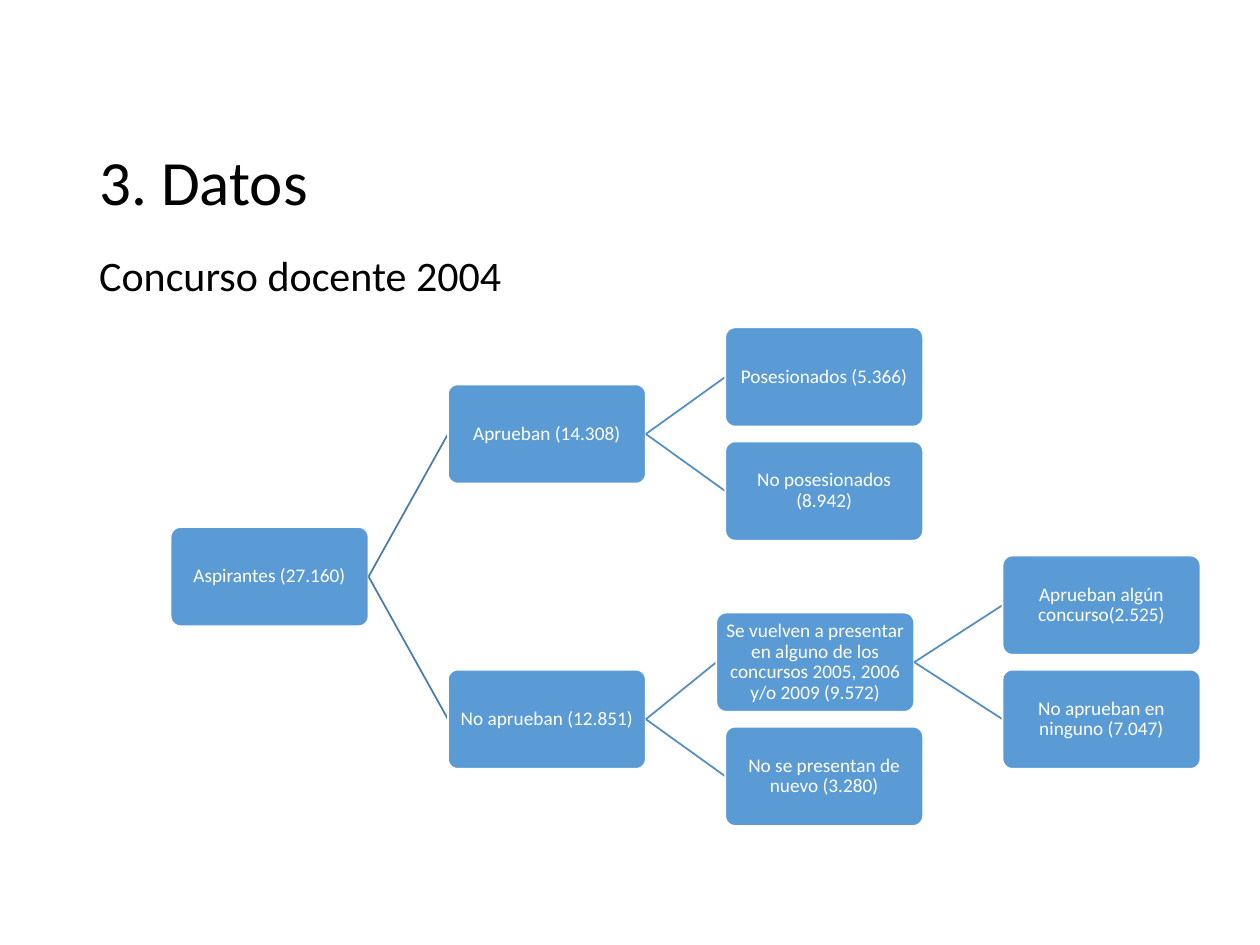
from dataclasses import dataclass

import pptx
import pptx.dml.color
import pptx.enum.shapes
import pptx.enum.text
import pptx.oxml.ns
import pptx.util
from lxml import etree

Cm = pptx.util.Cm
Pt = pptx.util.Pt
RGBColor = pptx.dml.color.RGBColor
Anchor = pptx.enum.text.MSO_ANCHOR
Align = pptx.enum.text.PP_ALIGN

BLACK = RGBColor(0x00, 0x00, 0x00)
WHITE = RGBColor(0xFF, 0xFF, 0xFF)
NODE_BLUE = RGBColor(0x5B, 0x9B, 0xD5)
LINK_COLOURS = (RGBColor(0x49, 0x7C, 0xAB), RGBColor(0x53, 0x8D, 0xC1), RGBColor(0x53, 0x8D, 0xC1))

FONT = "Calibri"
NODE_WIDTH = Cm(3.99)
NODE_HEIGHT = Cm(2)
FIRST_LEFT = Cm(3.44)
COLUMN_PITCH = Cm(5.59)
FIRST_MIDDLE = Cm(7.6)
ROW_PITCH = Cm(1.15)


@dataclass(frozen=True)
class Node:
    text: str
    column: int
    row: float
    children: tuple["Node", ...] = ()
    shift: int = 0


TREE = Node("Aspirantes (27.160)", 0, 3.5, (
    Node("Aprueban (14.308)", 1, 1, (
        Node("Posesionados (5.366)", 2, 0),
        Node("No posesionados (8.942)", 2, 2),
    )),
    Node("No aprueban (12.851)", 1, 6, (
        Node("Se vuelven a presentar en alguno de los concursos 2005, 2006 y/o 2009 (9.572)", 2, 5, (
            Node("Aprueban algún concurso(2.525)", 3, 4),
            Node("No aprueban en ninguno (7.047)", 3, 6),
        ), Cm(-0.18)),
        Node("No se presentan de nuevo (3.280)", 2, 7),
    )),
))


def write(frame, text: str, size: int, colour: RGBColor, align, anchor) -> None:
    frame.word_wrap = True
    frame.vertical_anchor = anchor
    paragraph = frame.paragraphs[0]
    paragraph.text = text
    paragraph.alignment = align
    paragraph.line_spacing = 0.9
    paragraph.font.name = FONT
    paragraph.font.size = Pt(size)
    paragraph.font.color.rgb = colour


def add_heading(page, text: str, top: int, height: int, size: int, anchor) -> None:
    box = page.shapes.add_textbox(Cm(1.75), top, Cm(21.9), height)
    write(box.text_frame, text, size, BLACK, Align.LEFT, anchor)


def add_node(page, node: Node):
    left = FIRST_LEFT + node.column * COLUMN_PITCH + node.shift
    top = FIRST_MIDDLE + round(node.row * ROW_PITCH) - NODE_HEIGHT // 2
    box = page.shapes.add_shape(
        pptx.enum.shapes.MSO_SHAPE.ROUNDED_RECTANGLE, left, top, NODE_WIDTH, NODE_HEIGHT)
    box.adjustments[0] = 0.1
    box.shadow.inherit = False
    box.fill.solid()
    box.fill.fore_color.rgb = NODE_BLUE
    box.line.color.rgb = WHITE
    box.line.width = Pt(1)
    frame = box.text_frame
    frame.margin_left = frame.margin_right = Cm(0.1)
    frame.margin_top = frame.margin_bottom = Cm(0.1)
    write(frame, node.text, 11, WHITE, Align.CENTER, Anchor.MIDDLE)
    return box


def add_link(page, colour: RGBColor):
    link = page.shapes.add_connector(pptx.enum.shapes.MSO_CONNECTOR.STRAIGHT, 0, 0, 0, 0)
    link.line.color.rgb = colour
    link.line.width = Pt(1)
    etree.SubElement(link._element.spPr, pptx.oxml.ns.qn("a:effectLst"))
    return link


def add_branch(page, node: Node) -> object:
    box = add_node(page, node)
    for child in node.children:
        link = add_link(page, LINK_COLOURS[node.column])
        child_box = add_branch(page, child)
        link.begin_connect(box, 3)
        link.end_connect(child_box, 1)
    return box


def main() -> None:
    deck = pptx.Presentation()
    deck.slide_width = Cm(25.4)
    deck.slide_height = Cm(19.05)
    page = deck.slides.add_slide(deck.slide_layouts[6])
    add_heading(page, "3. Datos", Cm(2.77), Cm(1.93), 36, Anchor.MIDDLE)
    add_heading(page, "Concurso docente 2004", Cm(5.03), Cm(11.33), 24, Anchor.TOP)
    add_branch(page, TREE)
    deck.save("out.pptx")


if __name__ == "__main__":
    main()
